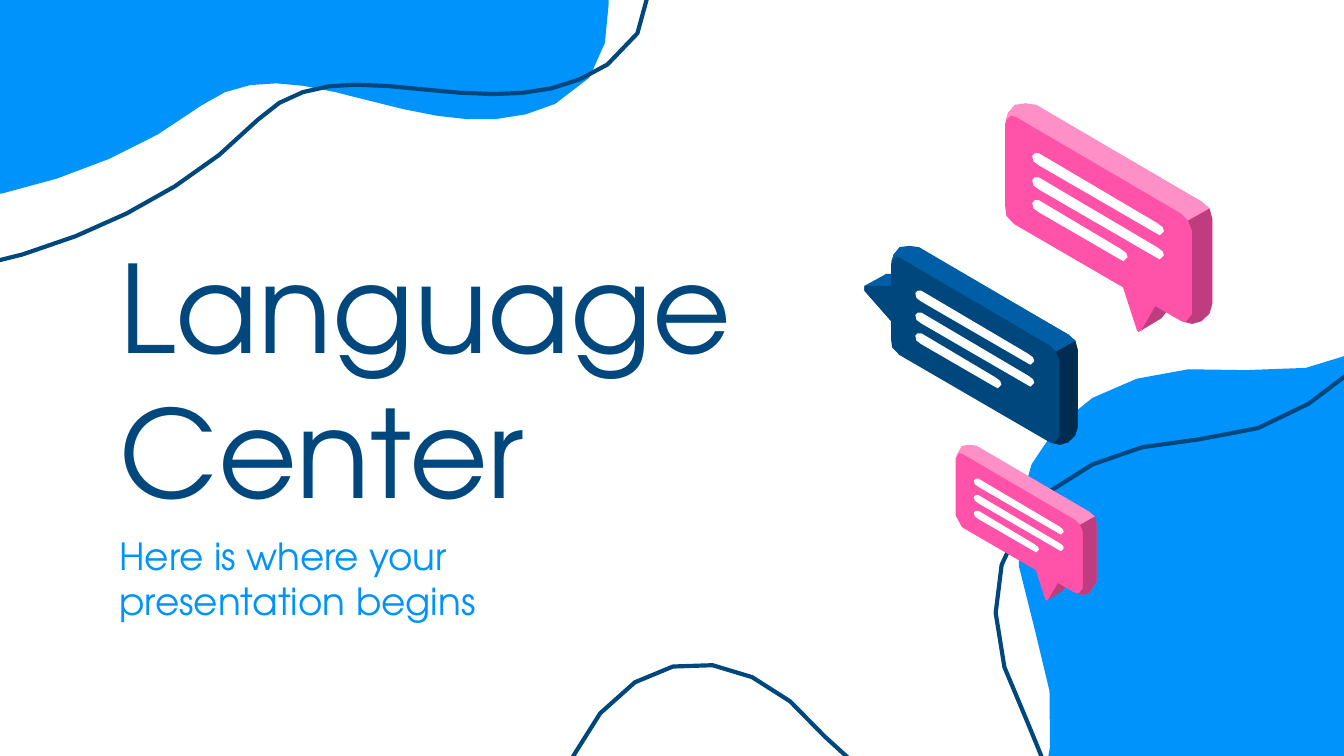
from dataclasses import dataclass
from math import cos, hypot, radians, sin, sqrt

from pptx import Presentation
from pptx.dml.color import RGBColor
from pptx.enum.text import MSO_ANCHOR
from pptx.util import Pt

TOP, MIDDLE = MSO_ANCHOR.TOP, MSO_ANCHOR.MIDDLE
BLANK_LAYOUT = 6
CURVE_DETAIL = 0.5


@dataclass(frozen=True)
class Palette:
    front: str
    side: str
    top: str


@dataclass(frozen=True)
class Theme:
    font: str = "TeX Gyre Adventor"
    title_size: float = 65
    subtitle_size: float = 20
    line_width: float = 2.25
    inset: float = 7.2
    navy: str = "00477D"
    blue: str = "0093FC"
    white: str = "FFFFFF"
    pink_bubble: Palette = Palette("FF52A8", "BF3D7E", "FF8FC7")
    navy_bubble: Palette = Palette("00477D", "002D4F", "005EA6")


THEME = Theme()

# Outlines on a design grid: two numbers are a corner, six a cubic curve.
BLOB_GRID = (915, 787)
BLOB = [
    (543, 0), (518, 0, 494, 3, 473, 8), (357, 37, 321, 177, 193, 184),
    (75, 190, 0, 274, 67, 398), (141, 535, 19, 624, 103, 746),
    (122, 774, 164, 787, 214, 787), (307, 787, 431, 743, 502, 669),
    (522, 649, 547, 643, 575, 643), (607, 643, 642, 650, 677, 650),
    (706, 650, 735, 646, 762, 628), (825, 587, 766, 510, 786, 466),
    (805, 426, 878, 406, 890, 366), (915, 283, 785, 266, 773, 154),
    (762, 46, 644, 0, 543, 0),
]
BUBBLE_GRID_WIDTH = 154
BUBBLE_BODY = [
    (15, 0), (13, 0, 10, 0, 8, 2), (3, 4, 0, 9, 0, 15), (0, 77),
    (0, 82, 0, 86, 7, 90), (131, 162), (134, 163, 136, 164, 139, 164),
    (141, 164, 144, 163, 146, 162), (151, 159, 154, 154, 154, 149), (154, 86),
    (154, 81, 151, 76, 146, 73), (23, 2), (21, 0, 18, 0, 15, 0),
]
BUBBLE_SIDE = [
    (152, 78), (136, 87), (138, 90, 139, 92, 139, 95), (139, 157),
    (139, 161, 137, 163, 134, 163), (132, 162),
    (134, 163, 137, 164, 139, 164), (141, 164, 144, 163, 146, 162),
    (151, 159, 154, 154, 154, 149), (154, 86), (154, 83, 153, 81, 152, 78),
]
BUBBLE_TOP = [
    (15, 0), (12, 0, 10, 0, 7, 1), (4, 4, 1, 8, 0, 13), (1, 10, 2, 9, 4, 9),
    (5, 9, 6, 10, 8, 10), (131, 82), (133, 83, 135, 85, 136, 87), (152, 78),
    (150, 76, 149, 74, 146, 73), (23, 1), (20, 0, 18, 0, 15, 0),
]
# Each tail part names the palette role that fills it
TAIL_BELOW = [
    ("side", [(111, 149), (101, 169), (116, 160), (120, 155)]),
    ("front", [(87, 135), (98, 169), (99, 170), (101, 169), (112, 150)]),
]
TAIL_LEFT = [
    ("top", [(15.5, 23), (24, 29), (24, 58), (15.5, 53), (9, 44), (9, 68),
             (0, 62), (-22, 37), (-22, 33), (-5.5, 24), (-4, 23)]),
    ("front", [(0, 33), (9, 38), (9, 68), (0, 62), (-22, 37), (-22, 33),
               (-21, 33)]),
]
# Top and shortening of the written lines on a bubble
BAR_LEFT = 20
BARS = [(37, 0), (55, 0), (72, 27)]
BAR_SLOPE = 0.58


def color(value):
    return RGBColor.from_string(value)


def flatten(outline, scale):
    """Turn corners and curves into points, with more steps on longer curves."""
    points = [outline[0]]
    for segment in outline[1:]:
        if len(segment) == 2:
            points.append(segment)
            continue
        x0, y0 = points[-1]
        x1, y1, x2, y2, x3, y3 = segment
        length = hypot(x1 - x0, y1 - y0) + hypot(x2 - x1, y2 - y1) + hypot(x3 - x2, y3 - y2)
        steps = max(1, round(CURVE_DETAIL * sqrt(length * scale)))
        for step in range(1, steps + 1):
            t = step / steps
            a, b, c, d = (1 - t) ** 3, 3 * t * (1 - t) ** 2, 3 * t * t * (1 - t), t ** 3
            points.append((a * x0 + b * x1 + c * x2 + d * x3,
                           a * y0 + b * y1 + c * y2 + d * y3))
    if points[-1] == points[0]:
        points.pop()
    return points


def add_outline(page, outline, left, top, scale, fill=None, line=None):
    points = [(Pt(left + x * scale), Pt(top + y * scale))
              for x, y in flatten(outline, scale)]
    builder = page.shapes.build_freeform(*points[0])
    builder.add_line_segments(points[1:], close=True)
    shape = builder.convert_to_shape()
    shape.shadow.inherit = False
    if fill:
        shape.fill.solid()
        shape.fill.fore_color.rgb = color(fill)
    else:
        shape.fill.background()
    if line:
        shape.line.color.rgb = color(line)
        shape.line.width = Pt(THEME.line_width)
    else:
        shape.line.fill.background()
    return shape


def add_blob(page, left, top, width, turn=0, **paint):
    """Place the blob, turned about the middle of its design grid."""
    scale = width / BLOB_GRID[0]
    shape = add_outline(page, BLOB, left, top, scale, **paint)
    middle_x = Pt(left + width / 2)
    middle_y = Pt(top + BLOB_GRID[1] * scale / 2)
    dx = shape.left + shape.width / 2 - middle_x
    dy = shape.top + shape.height / 2 - middle_y
    angle = radians(turn)
    shape.left = round(middle_x + dx * cos(angle) - dy * sin(angle) - shape.width / 2)
    shape.top = round(middle_y + dx * sin(angle) + dy * cos(angle) - shape.height / 2)
    shape.rotation = turn


def add_blob_pair(page, left, top, width):
    add_blob(page, left, top - 10.08, width, turn=8.7, fill=THEME.blue)
    add_blob(page, left, top, width, line=THEME.navy)


def bar_outline(shortening):
    """A slanted bar with round ends."""
    x, y = -shortening, -shortening * BAR_SLOPE
    return [(2, 0), (0, 2), (1, 6), (5, 9), (93 + x, 60 + y), (95 + x, 61 + y),
            (98 + x, 58 + y), (97 + x, 55 + y), (93 + x, 52 + y), (5, 0)]


def add_bubble(page, left, top, width, palette, tail):
    scale = width / BUBBLE_GRID_WIDTH
    faces = [("front", BUBBLE_BODY), ("side", BUBBLE_SIDE), ("top", BUBBLE_TOP)]
    for role, outline in tail + faces:
        add_outline(page, outline, left, top, scale, fill=getattr(palette, role))
    for bar_top, shortening in BARS:
        add_outline(page, bar_outline(shortening), left + BAR_LEFT * scale,
                    top + bar_top * scale, scale, fill=THEME.white)


def add_text(page, lines, left, top, width, height, *, size, fill, anchor=TOP):
    box = page.shapes.add_textbox(Pt(left), Pt(top), Pt(width), Pt(height))
    frame = box.text_frame
    frame.word_wrap = True
    frame.vertical_anchor = anchor
    frame.margin_left = frame.margin_right = Pt(THEME.inset)
    frame.margin_top = frame.margin_bottom = Pt(THEME.inset)
    for index, line in enumerate(lines):
        para = frame.add_paragraph() if index else frame.paragraphs[0]
        span = para.add_run()
        span.text = line
        span.font.name = THEME.font
        span.font.size = Pt(size)
        span.font.color.rgb = color(fill)


def add_heading(page, left, top):
    add_text(page, ["Language Center"], left, top, 383, 152.6,
             size=THEME.title_size, fill=THEME.navy, anchor=MIDDLE)
    add_text(page, ["Here is where your", "presentation begins"],
             left, top + 152.6, 278, 83.5,
             size=THEME.subtitle_size, fill=THEME.blue)


def build_cover(deck):
    page = deck.slides.add_slide(deck.slide_layouts[BLANK_LAYOUT])
    # Corner blobs and the wave at the bottom
    add_blob_pair(page, -223.2, -417.6, 658.8)
    add_blob_pair(page, 503.28, 102.96, 658.8)
    add_blob(page, 181.44, 363.6, 504.72, turn=54.1, line=THEME.navy)
    # Title and subtitle
    add_heading(page, 56.9, 126)
    # Speech bubbles
    add_bubble(page, 538.56, 55.44, 110.88, THEME.pink_bubble, TAIL_BELOW)
    add_bubble(page, 477.36, 131.76, 100.08, THEME.navy_bubble, TAIL_LEFT)
    add_bubble(page, 511.92, 238.32, 75.6, THEME.pink_bubble, TAIL_BELOW)


def main():
    deck = Presentation()
    deck.slide_width, deck.slide_height = Pt(720), Pt(405)
    build_cover(deck)
    deck.save("out.pptx")


if __name__ == "__main__":
    main()
